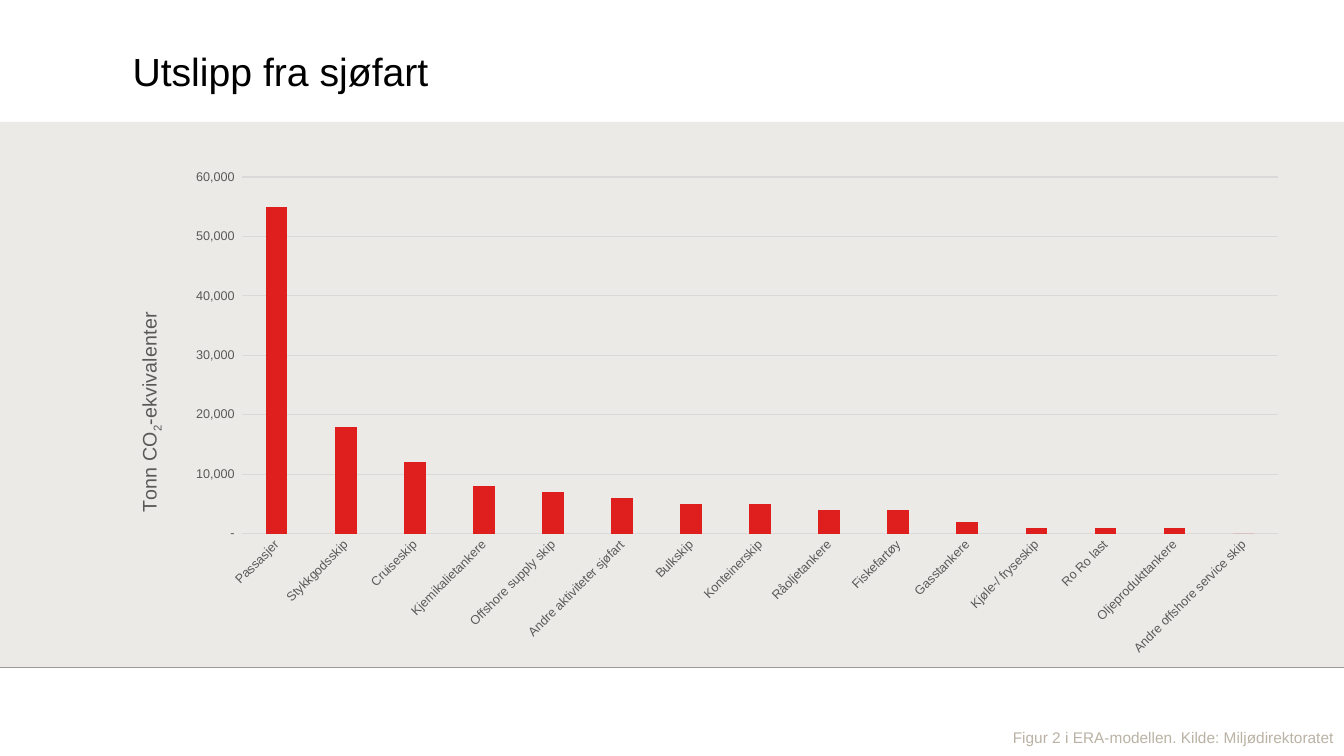
from lxml.etree import SubElement
from pptx import Presentation
from pptx.chart.data import CategoryChartData
from pptx.dml.color import RGBColor
from pptx.enum.chart import XL_CHART_TYPE, XL_TICK_MARK
from pptx.enum.shapes import MSO_CONNECTOR, MSO_SHAPE
from pptx.enum.text import MSO_ANCHOR
from pptx.oxml import parse_xml
from pptx.oxml.ns import nsdecls, qn
from pptx.util import Pt

TITLE = "Utslipp fra sjøfart"
SOURCE = "Figur 2 i ERA-modellen. Kilde: Miljødirektoratet"
AXIS_TITLE = ["Tonn CO", "2", "-ekvivalenter"]
EMISSIONS = {
    "Passasjer": 55000,
    "Stykkgodsskip": 18000,
    "Cruiseskip": 12000,
    "Kjemikalietankere": 8000,
    "Offshore supply skip": 7000,
    "Andre aktiviteter sjøfart": 6000,
    "Bulkskip": 5000,
    "Konteinerskip": 5000,
    "Råoljetankere": 4000,
    "Fiskefartøy": 4000,
    "Gasstankere": 2000,
    "Kjøle-/ fryseskip": 1000,
    "Ro Ro last": 1000,
    "Oljeprodukttankere": 1000,
    "Andre offshore service skip": 0,
}
COLORS = {"black": "000000", "band": "ECEAE6", "source": "BAB2A4",
          "label": "595959", "grid": "D9D9D9", "bar": "DF1F1D"}
WIDTH, HEIGHT = 960, 540
BAND_TOP, BAND_BOTTOM, RULE_TOP = 87.1, 476.9, 476.6


def color(name):
    return RGBColor.from_string(COLORS[name])


def set_values(target, values):
    for name, value in values.items():
        setattr(target, name, value)


def set_font(font, size, name):
    set_values(font, {"name": "Arial", "size": Pt(size), "bold": False})
    font.color.rgb = color(name)


def set_line(line, name):
    line.color.rgb = color(name)
    line.width = Pt(0.75)


def add_text(slide, text, box, size, name, frame_format):
    frame = slide.shapes.add_textbox(*map(Pt, box)).text_frame
    set_values(frame, {"word_wrap": True, "margin_right": 0, **frame_format})
    run = frame.paragraphs[0].add_run()
    run.text = text
    set_font(run.font, size, name)


def manual_layout(**values):
    layout = parse_xml(f"<c:layout {nsdecls('c')}><c:manualLayout/></c:layout>")
    for name, value in values.items():
        SubElement(layout[0], qn(f"c:{name}")).set("val", str(value))
    return layout


def place(parent, index, layout):
    for old in parent.findall(qn("c:layout")):
        parent.remove(old)
    parent.insert(index, layout)


def add_emission_chart(slide):
    data = CategoryChartData(number_format="#,##0")
    data.categories = list(EMISSIONS)
    data.add_series("Series 1", list(EMISSIONS.values()))
    box = map(Pt, (82.8, 113.8, 846.7, 361.4))
    chart = slide.shapes.add_chart(XL_CHART_TYPE.COLUMN_CLUSTERED, *box, data).chart
    set_values(chart, {"has_legend": False, "has_title": False})
    set_font(chart.font, 10, "black")

    plot = chart.plots[0]
    set_values(plot, {"gap_width": 219, "overlap": -27, "vary_by_categories": False})
    fill = plot.series[0].format.fill
    fill.solid()
    fill.fore_color.rgb = color("bar")

    for axis in (chart.category_axis, chart.value_axis):
        set_values(axis, {"major_tick_mark": XL_TICK_MARK.NONE,
                          "minor_tick_mark": XL_TICK_MARK.NONE})
        set_font(axis.tick_labels.font, 9, "label")
    set_line(chart.category_axis.format.line, "grid")

    value_axis = chart.value_axis
    set_values(value_axis, {"minimum_scale": 0, "maximum_scale": 60000,
                            "major_unit": 10000, "has_major_gridlines": True})
    set_values(value_axis.tick_labels, {"number_format": '#,##0_);(#,##0);"-"_)',
                                        "number_format_is_linked": False})
    value_axis.format.line.fill.background()
    set_line(value_axis.major_gridlines.format.line, "grid")

    paragraph = value_axis.axis_title.text_frame.paragraphs[0]
    for text in AXIS_TITLE:
        run = paragraph.add_run()
        run.text = text
        set_font(run.font, 14, "label")
        if text == "2":
            run._r.get_or_add_rPr().set("baseline", "-25000")

    root = chart._chartSpace
    root.xpath(".//c:catAx/c:txPr/a:bodyPr")[0].set("rot", "-2700000")
    axis_title = root.xpath(".//c:valAx/c:title")[0]
    axis_title.xpath(".//a:bodyPr")[0].set("rot", "-5400000")
    place(axis_title, 1, manual_layout(xMode="edge", yMode="edge", x=0.015, y=0.296))
    place(root.xpath(".//c:plotArea")[0], 0,
          manual_layout(layoutTarget="inner", xMode="edge", yMode="edge",
                        x=0.1065, y=0.035, w=0.874, h=0.705))


def main():
    presentation = Presentation()
    set_values(presentation, {"slide_width": Pt(WIDTH), "slide_height": Pt(HEIGHT)})
    slide = presentation.slides.add_slide(presentation.slide_layouts[6])

    ends = map(Pt, (0, RULE_TOP, WIDTH, RULE_TOP))
    rule = slide.shapes.add_connector(MSO_CONNECTOR.STRAIGHT, *ends)
    set_line(rule.line, "black")
    SubElement(rule._element.spPr, qn("a:effectLst"))

    box = map(Pt, (0, BAND_TOP, WIDTH, BAND_BOTTOM - BAND_TOP))
    band = slide.shapes.add_shape(MSO_SHAPE.RECTANGLE, *box)
    band.shadow.inherit = False
    band.fill.solid()
    band.fill.fore_color.rgb = color("band")
    band.line.fill.background()

    add_text(slide, TITLE, (94.7, 23.5, 799.2, 54), 28, "black",
             {"vertical_anchor": MSO_ANCHOR.MIDDLE,
              "margin_left": 0, "margin_top": 0, "margin_bottom": 0})
    add_text(slide, SOURCE, (716.4, 516.6, 243.6, 20.9), 11, "source", {})
    add_emission_chart(slide)
    presentation.save("out.pptx")


if __name__ == "__main__":
    main()
